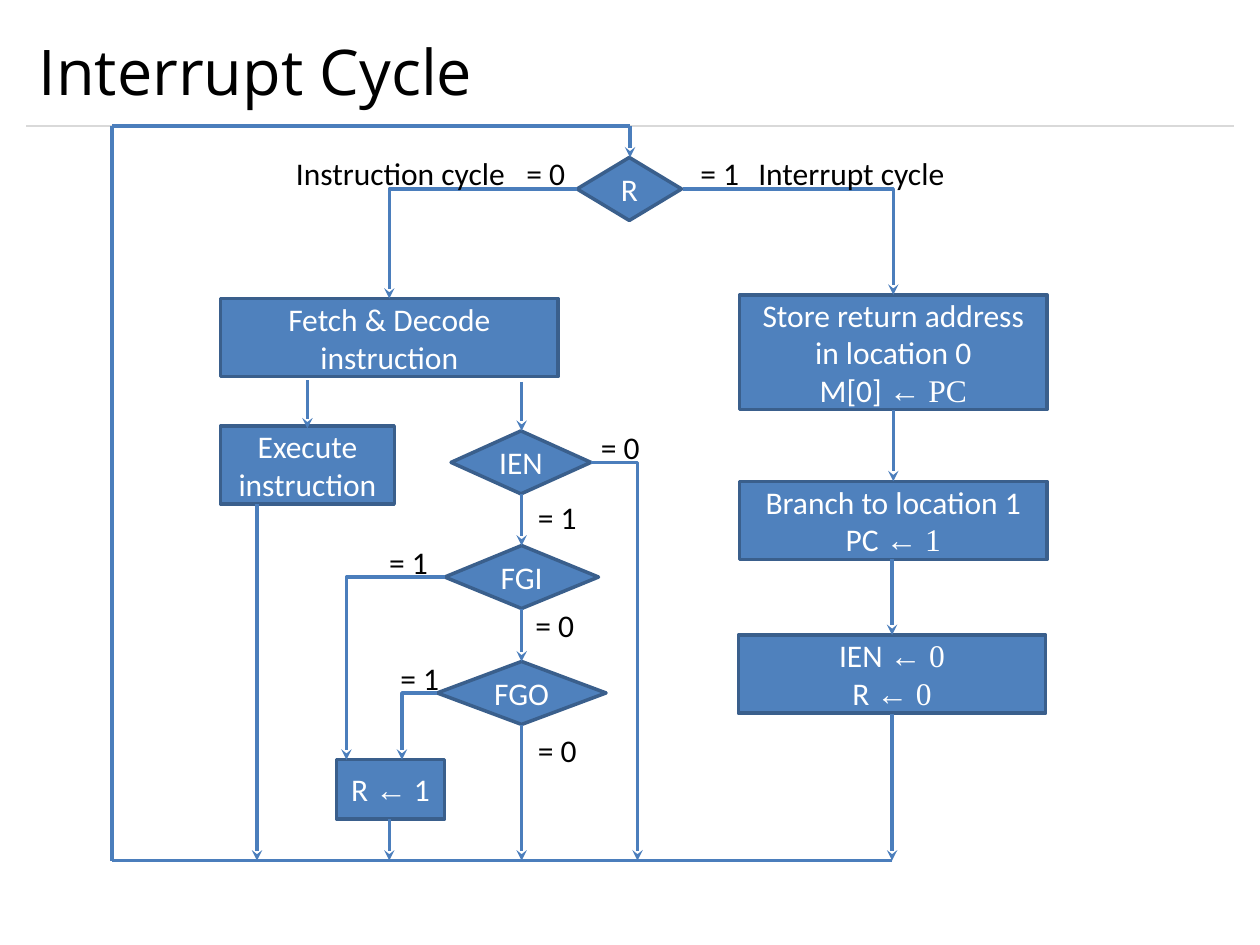
from pptx import Presentation
from pptx.dml.color import RGBColor
from pptx.enum.shapes import MSO_CONNECTOR, MSO_SHAPE
from pptx.enum.text import MSO_ANCHOR, MSO_AUTO_SIZE, PP_ALIGN
from pptx.oxml.ns import qn
from pptx.util import Inches, Pt
from lxml import etree

STRAIGHT, ELBOW = MSO_CONNECTOR.STRAIGHT, MSO_CONNECTOR.ELBOW
PROCESS, DECISION = MSO_SHAPE.RECTANGLE, MSO_SHAPE.FLOWCHART_DECISION
MIDDLE, CENTER = MSO_ANCHOR.MIDDLE, PP_ALIGN.CENTER
GROW = MSO_AUTO_SIZE.SHAPE_TO_FIT_TEXT

COLORS = {"fill": "4F81BD", "edge": "3A5F8C", "flow": "4B7EBC",
          "rule": "D9D9D9", "dark": "000000", "light": "FFFFFF"}
BODY, SERIF, HEADING = "Calibri", "Times New Roman", "Open Sans"


class FlowSlide:
    """Draws flowchart elements in one style on the current slide."""

    def __init__(self, slide):
        self.shapes = slide.shapes

    def color(self, name):
        return RGBColor.from_string(COLORS[name])

    def style_font(self, font, size, color):
        font.size = Pt(size)
        font.color.rgb = self.color(color)

    def text(self, left, top, width, height, words, size=18, face=BODY):
        box = self.shapes.add_textbox(Inches(left), Inches(top), Inches(width), Inches(height))
        frame = box.text_frame
        para = frame.paragraphs[0]
        para.text = words
        para.font.name = face
        self.style_font(para.font, size, "dark")
        return frame

    def title(self, words):
        frame = self.text(0.21, 0.12, 9.58, 0.88, words, 36, HEADING)
        frame.word_wrap = True
        frame.vertical_anchor = MIDDLE

    def label(self, left, top, words, width=0.51):
        frame = self.text(left, top, width, 0.4, words)
        frame.word_wrap = False
        frame.auto_size = GROW

    def node(self, kind, left, top, width, height, *lines):
        box = self.shapes.add_shape(kind, Inches(left), Inches(top), Inches(width), Inches(height))
        box.shadow.inherit = False
        box.fill.solid()
        box.fill.fore_color.rgb = self.color("fill")
        box.line.color.rgb = self.color("edge")
        box.line.width = Pt(2)
        frame = box.text_frame
        frame.word_wrap = True
        frame.vertical_anchor = MIDDLE
        for index, spans in enumerate(lines):
            para = frame.add_paragraph() if index else frame.paragraphs[0]
            para.alignment = CENTER
            self.style_font(para.font, 18, "light")
            for words, face in spans:
                span = para.add_run()
                span.text = words
                span.font.name = face
                self.style_font(span.font, 18, "light")

    def line(self, start, end, color="flow", weight=2, arrow=False, bent=False):
        connector = self.shapes.add_connector(
            ELBOW if bent else STRAIGHT, *(Inches(value) for value in (*start, *end)))
        connector.line.color.rgb = self.color(color)
        connector.line.width = Pt(weight)
        properties = connector._element.spPr
        if bent:
            properties.find(qn("a:prstGeom")).set("prst", "bentConnector2")
        if arrow:
            etree.SubElement(properties.find(qn("a:ln")), qn("a:tailEnd"), type="stealth")
        etree.SubElement(properties, qn("a:effectLst"))


def plain(words):
    return [(words, BODY)]


def transfer(target, value):
    return [(target + " ", BODY), ("← " + value, SERIF)]


def main():
    deck = Presentation()
    deck.slide_width, deck.slide_height = Inches(10), Inches(7.5)
    page = FlowSlide(deck.slides.add_slide(deck.slide_layouts[6]))

    page.line((0.21, 1), (9.79, 1), "rule", 0.75)
    page.title("Interrupt Cycle")

    for left, top, width, name in [(4.58, 1.25, 0.83, "R"), (3.58, 3.42, 1.11, "IEN"),
                                   (3.53, 4.33, 1.22, "FGI"), (3.47, 5.25, 1.34, "FGO")]:
        page.node(DECISION, left, top, width, 0.5, plain(name))

    page.node(PROCESS, 1.75, 2.37, 2.68, 0.62, plain("Fetch & Decode instruction"))
    page.node(PROCESS, 1.75, 3.38, 1.38, 0.62, plain("Execute instruction"))
    page.node(PROCESS, 2.67, 6.03, 0.86, 0.47, [("R ", BODY), ("←", SERIF), (" 1", BODY)])
    page.node(PROCESS, 5.87, 2.34, 2.44, 0.91,
              plain("Store return address in location 0"), transfer("M[0]", "PC"))
    page.node(PROCESS, 5.87, 3.82, 2.44, 0.62,
              plain("Branch to location 1"), transfer("PC", "1"))
    page.node(PROCESS, 5.86, 5.04, 2.44, 0.62, transfer("IEN", "0"), transfer("R", "0"))

    bottom = 6.83
    for x, top, end in [(4.14, 3.03, 3.42), (4.14, 3.92, 4.33), (4.14, 4.83, 5.25),
                        (7.09, 3.25, 3.82), (7.08, 4.44, 5.04), (2.44, 3.02, 3.4),
                        (2.04, 4, bottom), (3.09, 6.5, bottom), (4.14, 5.75, bottom),
                        (7.08, 5.67, bottom), (5, 1, 1.25)]:
        page.line((x, top), (x, end), arrow=True)

    for start, end in [((4.58, 1.5), (3.09, 2.37)), ((5.42, 1.5), (7.09, 2.34)),
                       ((4.69, 3.67), (5.06, bottom)), ((3.53, 4.58), (2.75, 6.03)),
                       ((3.47, 5.5), (3.19, 6.03))]:
        page.line(start, end, arrow=True, bent=True)

    loop = [(7.08, bottom), (0.89, bottom), (0.89, 1), (5, 1)]
    for start, end in zip(loop, loop[1:]):
        page.line(start, end)

    page.label(2.25, 1.17, "Instruction cycle", 1.88)
    page.label(5.92, 1.17, "Interrupt cycle", 1.69)
    for words, places in {
        "= 0": [(4.08, 1.17), (4.67, 3.35), (4.15, 4.76), (4.17, 5.75)],
        "= 1": [(5.46, 1.17), (4.17, 3.9), (2.99, 4.26), (3.08, 5.18)],
    }.items():
        for left, top in places:
            page.label(left, top, words)

    deck.save("out.pptx")


if __name__ == "__main__":
    main()
